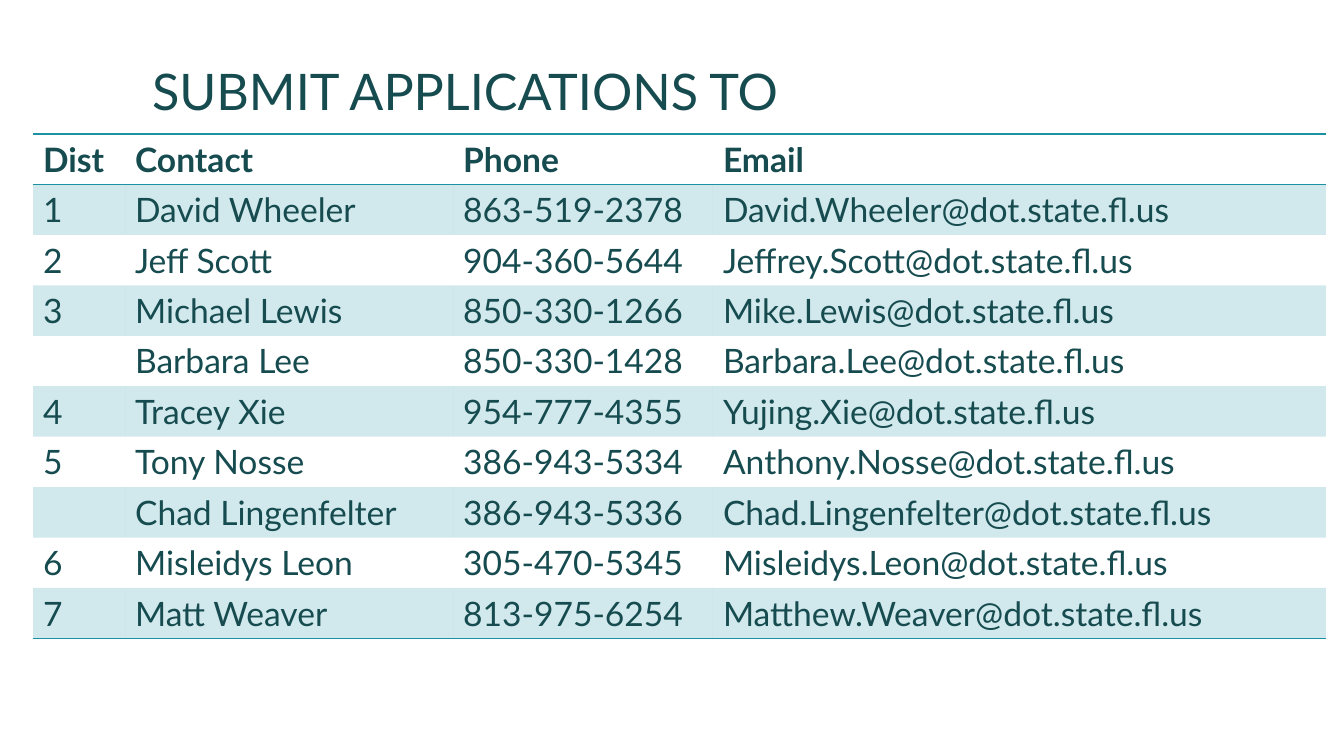
from lxml import etree
from pptx import Presentation
from pptx import util as u
from pptx.dml.color import RGBColor
from pptx.enum import text
from pptx.oxml.ns import qn

# Content
TITLE = "SUBMIT APPLICATIONS TO"
CONTACTS = [
    ("Dist", "Contact", "Phone", "Email"),
    ("1", "David Wheeler", "863-519-2378", "David.Wheeler@dot.state.fl.us"),
    ("2", "Jeff Scott", "904-360-5644", "Jeffrey.Scott@dot.state.fl.us"),
    ("3", "Michael Lewis", "850-330-1266", "Mike.Lewis@dot.state.fl.us"),
    ("", "Barbara Lee", "850-330-1428", "Barbara.Lee@dot.state.fl.us"),
    ("4", "Tracey Xie", "954-777-4355", "Yujing.Xie@dot.state.fl.us"),
    ("5", "Tony Nosse", "386-943-5334", "Anthony.Nosse@dot.state.fl.us"),
    ("", "Chad Lingenfelter", "386-943-5336", "Chad.Lingenfelter@dot.state.fl.us"),
    ("6", "Misleidys Leon", "305-470-5345", "Misleidys.Leon@dot.state.fl.us"),
    ("7", "Matt Weaver", "813-975-6254", "Matthew.Weaver@dot.state.fl.us"),
]

# Look and layout, lengths in px
FONT = "Lato"
INK = RGBColor(0x16, 0x4B, 0x4F)
TEAL = RGBColor(0x1B, 0x91, 0xA1)
BAND_ALPHA = 20
NO_GRID_STYLE = "{2D5ABB26-0587-4C30-8999-92F81FD0307C}"
SLIDE_W, SLIDE_H = 1344, 756
TABLE_LEFT, TABLE_TOP, ROW_H = 33, 134, 50
COL_WIDTHS = (92, 328, 260, 613)


def px(n):
    return u.Emu(round(n * 914400 / 100.8))


def style(p, size, bold=False):
    p.alignment = text.PP_ALIGN.LEFT
    p.font.name, p.font.size, p.font.bold = FONT, u.Pt(size), bold
    p.font.color.rgb = INK


def rule(cell, side):
    ln = etree.SubElement(cell._tc.get_or_add_tcPr(), qn("a:" + side), w=str(u.Pt(1)))
    fill = etree.SubElement(ln, qn("a:solidFill"))
    etree.SubElement(fill, qn("a:srgbClr"), val=str(TEAL))


def band(cell):
    cell.fill.solid()
    cell.fill.fore_color.rgb = TEAL
    color = cell._tc.tcPr.find(qn("a:solidFill"))[0]
    etree.SubElement(color, qn("a:alpha"), val=str(BAND_ALPHA * 1000))


prs = Presentation()
prs.slide_width, prs.slide_height = px(SLIDE_W), px(SLIDE_H)
s = prs.slides.add_slide(prs.slide_layouts[5])

# Title
title = s.shapes.title
title.left, title.top, title.width, title.height = map(px, (142, 42, 1058, 84))
tf = title.text_frame
tf.text = TITLE
tf.auto_size = text.MSO_AUTO_SIZE.NONE
tf.vertical_anchor = text.MSO_ANCHOR.BOTTOM
tf.paragraphs[0].line_spacing = 0.9
style(tf.paragraphs[0], 36)

# Contact table
last = len(CONTACTS) - 1
table = s.shapes.add_table(
    len(CONTACTS), len(COL_WIDTHS), px(TABLE_LEFT), px(TABLE_TOP),
    px(sum(COL_WIDTHS)), px(ROW_H * len(CONTACTS))).table
table._tbl.tblPr.find(qn("a:tableStyleId")).text = NO_GRID_STYLE
table.horz_banding = False
for column, width in zip(table.columns, COL_WIDTHS):
    column.width = px(width)

for i, contact in enumerate(CONTACTS):
    table.rows[i].height = px(ROW_H)
    for j, value in enumerate(contact):
        cell = table.cell(i, j)
        cell.text = value
        style(cell.text_frame.paragraphs[0], 24, bold=i == 0)
        if i == 0:
            rule(cell, "lnT")
        if i in (0, last):
            rule(cell, "lnB")
        if i % 2:
            band(cell)
        else:
            cell.fill.background()

prs.save("out.pptx")
